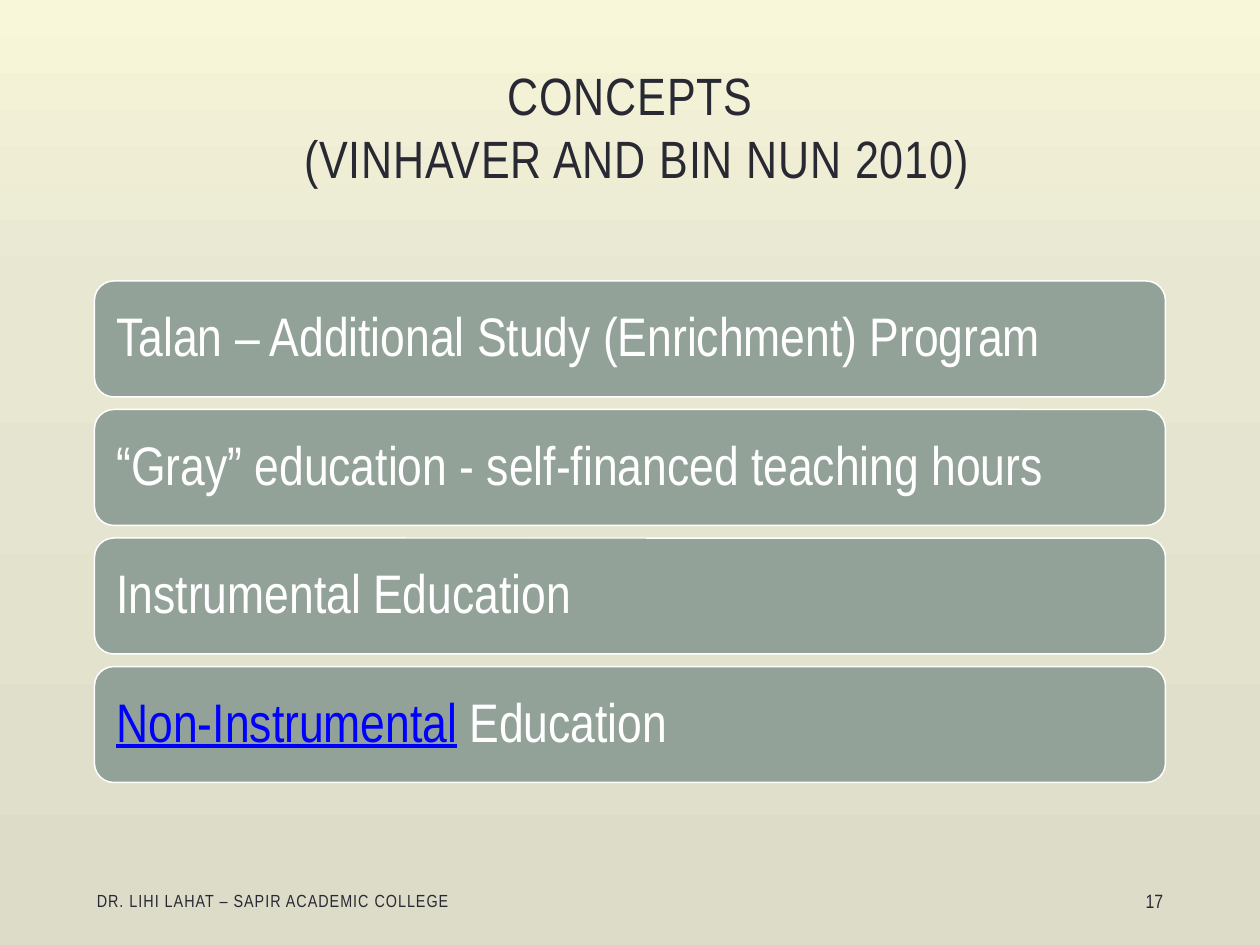
from typing import NamedTuple

from lxml import etree
from pptx import Presentation
from pptx.dml.color import RGBColor
from pptx.enum.shapes import MSO_SHAPE
from pptx.enum.text import MSO_ANCHOR, PP_ALIGN
from pptx.oxml.ns import qn
from pptx.util import Inches, Pt

ROUNDED = MSO_SHAPE.ROUNDED_RECTANGLE
MIDDLE, BOTTOM = MSO_ANCHOR.MIDDLE, MSO_ANCHOR.BOTTOM
LEFT, CENTER, RIGHT = PP_ALIGN.LEFT, PP_ALIGN.CENTER, PP_ALIGN.RIGHT
FONT = "Arial Narrow"
INK, WHITE, SAGE, LINK = "292934", "FFFFFF", "93A299", "0000FF"
BACKGROUND = [(0, "F8F7D9"), (31, "E8E7D2"), (100, "DDDCC8")]
BAR_TOP, BAR_PITCH = 2.23, 1.02


class Run(NamedTuple):
    text: str
    color: str = WHITE
    underline: bool = False


class Label(NamedTuple):
    lines: list[str]
    box: tuple[float, float, float, float]
    size: float
    align: PP_ALIGN
    anchor: MSO_ANCHOR = MIDDLE
    spacing: int = 0


LABELS = [
    Label(["CONCEPTS", " (VINHAVER AND BIN NUN 2010)"], (0.67, 0.3, 8.67, 1.25),
          30, CENTER, BOTTOM, 50),
    Label(["DR. LIHI LAHAT – SAPIR ACADEMIC COLLEGE"], (0.67, 6.95, 3.17, 0.4),
          10, LEFT, spacing=60),
    Label(["17"], (8.25, 6.95, 1.08, 0.4), 11, RIGHT),
]
CONCEPTS = [
    [Run("Talan – Additional Study (Enrichment) Program")],
    [Run("“Gray” education - self-financed teaching hours")],
    [Run("Instrumental Education")],
    [Run("Non-Instrumental", LINK, True), Run(" Education")],
]


def rgb(value: str) -> RGBColor:
    return RGBColor.from_string(value)


def paint_background(s) -> None:
    fill = s.background.fill
    fill.gradient()
    fill.gradient_angle = 270
    stops = next(s.element.iter(qn("a:gsLst")))
    for stop in list(stops):
        stops.remove(stop)
    for position, color in BACKGROUND:
        stop = etree.SubElement(stops, qn("a:gs"), pos=str(position * 1000))
        etree.SubElement(stop, qn("a:srgbClr"), val=color)


def add_run(p, run: Run, size: float, spacing: int = 0) -> None:
    r = p.add_run()
    r.text = run.text
    r.font.name = FONT
    r.font.size = Pt(size)
    r.font.color.rgb = rgb(run.color)
    if run.underline:
        r.font.underline = True
    if spacing:
        r.font._element.set("spc", str(spacing))


def add_label(s, label: Label) -> None:
    tf = s.shapes.add_textbox(*map(Inches, label.box)).text_frame
    tf.word_wrap = True
    tf.vertical_anchor = label.anchor
    p = tf.paragraphs[0]
    p.alignment = label.align
    for i, line in enumerate(label.lines):
        if i:
            p.add_line_break()
        add_run(p, Run(line, INK), label.size, label.spacing)


def add_bar(s, top: float, runs: list[Run]) -> None:
    sp = s.shapes.add_shape(ROUNDED, Inches(0.75), Inches(top), Inches(8.5), Inches(0.92))
    sp.shadow.inherit = False
    sp.fill.solid()
    sp.fill.fore_color.rgb = rgb(SAGE)
    sp.line.color.rgb = rgb(WHITE)
    sp.line.width = Pt(0.85)
    tf = sp.text_frame
    tf.word_wrap = True
    tf.vertical_anchor = MIDDLE
    tf.margin_left = tf.margin_right = tf.margin_top = tf.margin_bottom = Inches(0.13)
    p = tf.paragraphs[0]
    p.alignment = LEFT
    p.line_spacing = 0.9
    for run in runs:
        add_run(p, run, 31)


def main() -> None:
    prs = Presentation()
    prs.slide_width, prs.slide_height = Inches(10), Inches(7.5)
    s = prs.slides.add_slide(prs.slide_layouts[6])
    paint_background(s)
    for label in LABELS:
        add_label(s, label)
    for i, runs in enumerate(CONCEPTS):
        add_bar(s, BAR_TOP + i * BAR_PITCH, runs)
    prs.save("out.pptx")


if __name__ == "__main__":
    main()
